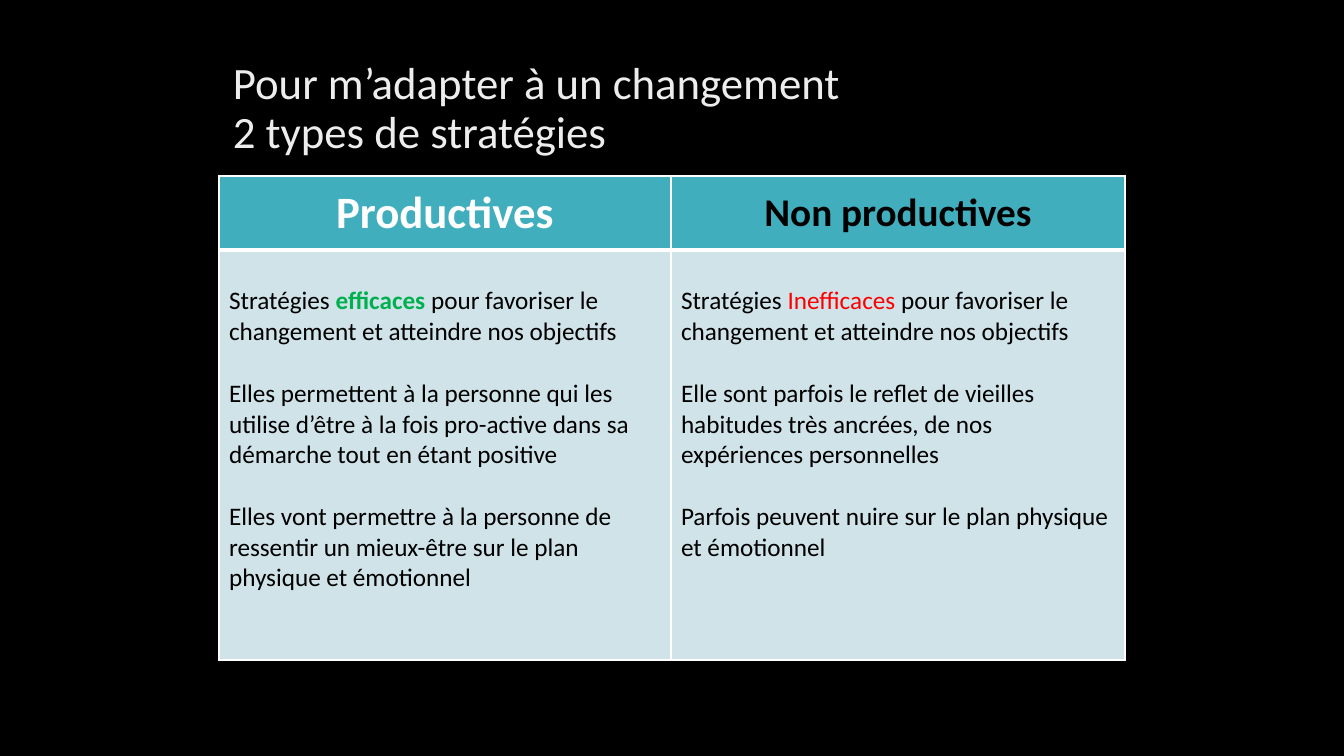
"""Build a slide that compares two types of strategies in a table."""
from dataclasses import dataclass

from lxml.etree import SubElement as Sub
from pptx import Presentation
from pptx.dml.color import RGBColor as Rgb
from pptx.enum.text import MSO_ANCHOR as Anchor, PP_ALIGN as Align
from pptx.oxml.ns import qn
from pptx.util import Emu, Pt

HUES = {
    "black": "000000",
    "white": "FFFFFF",
    "title": "EDEDED",
    "teal": "41AEBD",
    "pale": "CFE3E8",
    "green": "00B050",
    "red": "FF0000",
}
FONT = "Calibri"
ROWS = (74, 410)


@dataclass
class Run:
    text: str
    hue: str = "black"
    bold: bool = False


@dataclass
class Column:
    width: int
    head: Run
    size: int
    body: list[list[Run]]


GOAL = "pour favoriser le changement et atteindre nos objectifs"
COLUMNS = [
    Column(452, Run("Productives", "white", True), 32, [
        [Run("Stratégies "), Run("efficaces ", "green", True), Run(GOAL)],
        [Run("Elles permettent à la personne qui les utilise d’être à la fois "
             "pro-active dans sa démarche tout en étant positive")],
        [Run("Elles vont permettre à la personne de ressentir un mieux-être "
             "sur le plan physique et émotionnel")],
    ]),
    Column(454, Run("Non productives", "black", True), 28, [
        [Run("Stratégies "), Run("Inefficaces", "red"), Run(" " + GOAL)],
        [Run("Elle sont parfois le reflet de vieilles habitudes très ancrées, "
             "de nos expériences personnelles")],
        [Run("Parfois peuvent nuire sur le plan physique et émotionnel")],
    ]),
]


def px(count: int) -> Emu:
    """Turn pixels into EMU."""
    return Emu(round(count * 914400 / 100.8))


def write(frame, paras: list[list[Run]], *, size: int, align=Align.LEFT,
          gap: int = 0, line: float = 1.0) -> None:
    """Fill a text frame with formatted paragraphs."""
    for i, runs in enumerate(paras):
        para = frame.add_paragraph() if i else frame.paragraphs[0]
        para.alignment = align
        para.line_spacing = line
        para.space_before = Pt(gap if i else 0)
        for run in runs:
            for j, part in enumerate(run.text.split("\n")):
                if j:
                    para.add_line_break()
                item = para.add_run()
                item.text = part
                font = item.font
                font.name, font.size, font.bold = FONT, Pt(size), run.bold
                font.color.rgb = Rgb.from_string(HUES[run.hue])


def paint(cell, hue: str, **edges: int) -> None:
    """Set the borders of a cell, in points, and its fill."""
    props = cell._tc.get_or_add_tcPr()
    for side in "LRTB":
        edge = Sub(props, qn(f"a:ln{side}"), w=str(Pt(edges.get(side, 1))))
        Sub(Sub(edge, qn("a:solidFill")), qn("a:srgbClr"), val=HUES["white"])
    cell.fill.solid()
    cell.fill.fore_color.rgb = Rgb.from_string(HUES[hue])


def add_title(slide) -> None:
    """Add the heading above the table."""
    frame = slide.shapes.add_textbox(px(223), px(55), px(891), px(109)).text_frame
    frame.word_wrap = True
    frame.vertical_anchor = Anchor.MIDDLE
    text = "Pour m’adapter à un changement\n2 types de stratégies"
    write(frame, [[Run(text, "title")]], size=32, line=0.9)


def add_grid(slide) -> None:
    """Add the table with one column per type of strategy."""
    width = sum(col.width for col in COLUMNS)
    grid = slide.shapes.add_table(len(ROWS), len(COLUMNS), px(219), px(176),
                                  px(width), px(sum(ROWS))).table
    grid.horz_banding = False
    for row, height in zip(grid.rows, ROWS):
        row.height = px(height)
    for i, col in enumerate(COLUMNS):
        grid.columns[i].width = px(col.width)
        head, body = grid.cell(0, i), grid.cell(1, i)
        paint(head, "teal", B=3)
        paint(body, "pale", T=3)
        head.vertical_anchor = Anchor.MIDDLE
        body.margin_top = px(36)
        write(head.text_frame, [[col.head]], size=col.size, align=Align.CENTER)
        write(body.text_frame, col.body, size=18, gap=22)


def main() -> None:
    """Create the slide and save it."""
    deck = Presentation()
    deck.slide_width, deck.slide_height = px(1344), px(756)
    slide = deck.slides.add_slide(deck.slide_layouts[6])
    back = slide.background.fill
    back.solid()
    back.fore_color.rgb = Rgb.from_string(HUES["black"])
    add_title(slide)
    add_grid(slide)
    deck.save("out.pptx")


if __name__ == "__main__":
    main()
